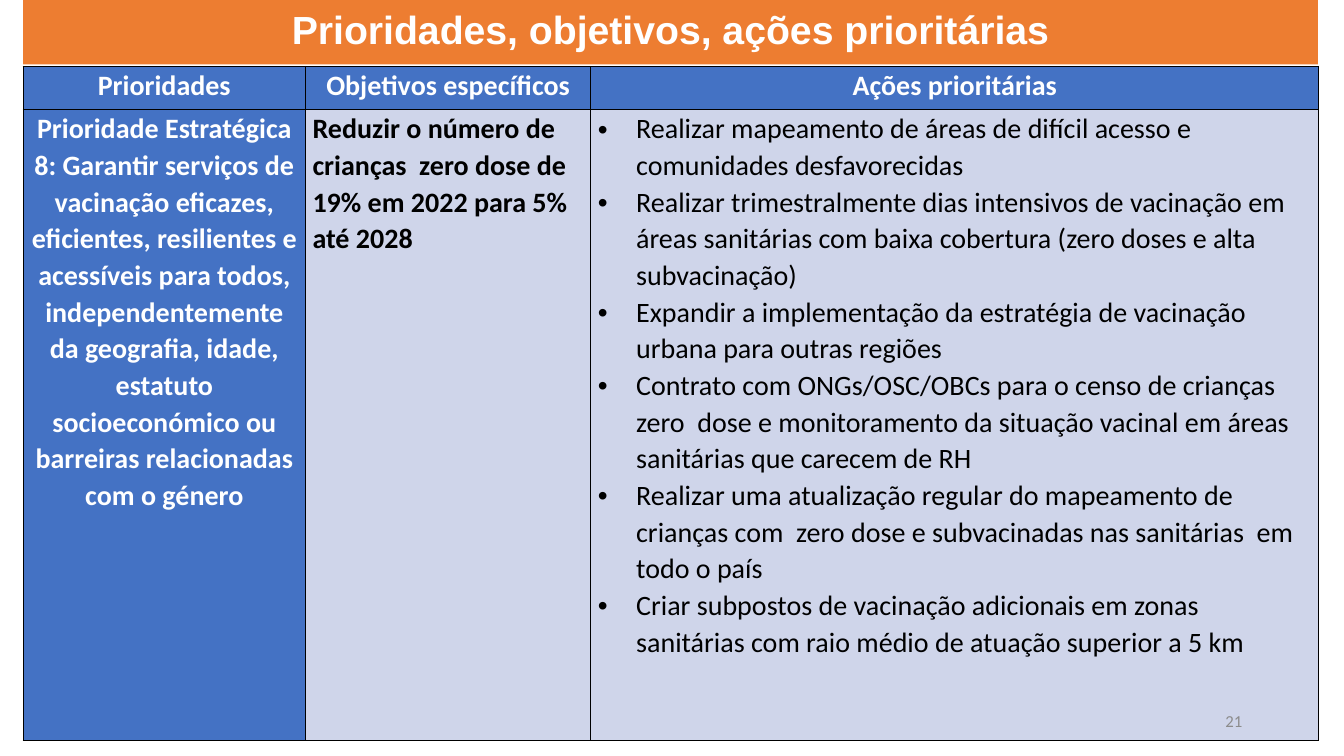
from lxml import etree
from pptx import Presentation
from pptx.dml.color import RGBColor
from pptx.enum.text import MSO_ANCHOR, MSO_AUTO_SIZE, PP_ALIGN
from pptx.oxml.ns import qn
from pptx.util import Inches, Pt

COLORS = {
    "orange": "ED7D31",
    "blue": "4472C4",
    "pale": "CFD5EA",
    "white": "FFFFFF",
    "black": "000000",
    "gray": "8C8C8C",
}

TITLE = "Prioridades, objetivos, ações prioritárias"
HEADERS = ["Prioridades", "Objetivos específicos", "Ações prioritárias"]
PRIORITY = (
    "Prioridade Estratégica 8: Garantir serviços de vacinação eficazes, "
    "eficientes, resilientes e acessíveis para todos, independentemente da "
    "geografia, idade, estatuto socioeconómico ou barreiras relacionadas com o género"
)
OBJECTIVE = "Reduzir o número de crianças  zero dose de 19% em 2022 para 5% até 2028"
ACTIONS = [
    "Realizar mapeamento de áreas de difícil acesso e comunidades desfavorecidas",
    "Realizar trimestralmente dias intensivos de vacinação em áreas sanitárias "
    "com baixa cobertura (zero doses e alta subvacinação)",
    "Expandir a implementação da estratégia de vacinação urbana para outras regiões",
    "Contrato com ONGs/OSC/OBCs para o censo de crianças zero  dose e "
    "monitoramento da situação vacinal em áreas sanitárias que carecem de RH",
    "Realizar uma atualização regular do mapeamento de crianças com  zero dose "
    "e subvacinadas nas sanitárias  em todo o país",
    "Criar subpostos de vacinação adicionais em zonas sanitárias com raio médio "
    "de atuação superior a 5 km",
]

LEFT, WIDTH = 0.23, 12.84
COLUMN_WIDTHS = [2.8, 2.83, 7.22]
ROW_HEIGHTS = [0.43, 6.26]
BULLET_INDENT = 0.38


def rgb(name):
    return RGBColor.from_string(COLORS[name])


def write_text(frame, texts, size=20, font="Calibri", color="black", bold=False,
               align=PP_ALIGN.LEFT, line=None, before=0, after=0, bullet=False):
    """Write one paragraph for each text, all in the same format."""
    for index, text in enumerate(texts):
        paragraph = frame.paragraphs[0] if index == 0 else frame.add_paragraph()
        paragraph.alignment = align
        paragraph.line_spacing = line
        paragraph.space_before, paragraph.space_after = Pt(before), Pt(after)
        run = paragraph.add_run()
        run.text = text
        run.font.size, run.font.name, run.font.bold = Pt(size), font, bold
        run.font.color.rgb = rgb(color)
        if bullet:
            add_bullet(paragraph)


def add_bullet(paragraph):
    properties = paragraph._p.get_or_add_pPr()
    properties.set("marL", str(Inches(BULLET_INDENT)))
    properties.set("indent", str(-Inches(BULLET_INDENT)))
    etree.SubElement(properties, qn("a:buFont")).set("typeface", "Arial")
    etree.SubElement(properties, qn("a:buChar")).set("char", "•")


def add_borders(cell):
    """Draw a thin black line on each side; borders come before the fill."""
    properties = cell._tc.get_or_add_tcPr()
    for position, side in enumerate(("a:lnL", "a:lnR", "a:lnT", "a:lnB")):
        border = etree.Element(qn(side), w=str(Pt(1)))
        fill = etree.SubElement(border, qn("a:solidFill"))
        etree.SubElement(fill, qn("a:srgbClr")).set("val", COLORS["black"])
        properties.insert(position, border)


def fill_cell(cell, texts, fill, **text_format):
    cell.margin_left = cell.margin_right = Inches(0.07)
    cell.margin_top = cell.margin_bottom = 0
    cell.fill.solid()
    cell.fill.fore_color.rgb = rgb(fill)
    add_borders(cell)
    write_text(cell.text_frame, texts, line=1.07, **text_format)


def add_title(slide):
    title = slide.shapes.title
    title.left, title.top = Inches(LEFT), Inches(0)
    title.width, title.height = Inches(WIDTH), Inches(0.64)
    title.fill.solid()
    title.fill.fore_color.rgb = rgb("orange")
    frame = title.text_frame
    frame.auto_size = MSO_AUTO_SIZE.NONE
    frame.vertical_anchor = MSO_ANCHOR.MIDDLE
    write_text(frame, [TITLE], size=28, font="Arial", color="white", bold=True,
               align=PP_ALIGN.CENTER, line=0.9)


def add_priorities_table(slide):
    table = slide.shapes.add_table(
        len(ROW_HEIGHTS), len(COLUMN_WIDTHS), Inches(LEFT), Inches(0.66),
        Inches(WIDTH), Inches(sum(ROW_HEIGHTS))).table
    for column, width in zip(table.columns, COLUMN_WIDTHS):
        column.width = Inches(width)
    for row, height in zip(table.rows, ROW_HEIGHTS):
        row.height = Inches(height)

    # Header row and priority column share one look
    spaced = {"bold": True, "before": 12, "after": 8}
    heading = {"fill": "blue", "color": "white", "align": PP_ALIGN.CENTER, **spaced}
    for index, header in enumerate(HEADERS):
        fill_cell(table.cell(0, index), [header], **heading)
    fill_cell(table.cell(1, 0), [PRIORITY], **heading)

    # Objective and actions
    fill_cell(table.cell(1, 1), [OBJECTIVE], fill="pale", **spaced)
    fill_cell(table.cell(1, 2), ACTIONS, fill="pale", bullet=True)


def add_page_number(slide):
    box = slide.shapes.add_textbox(Inches(9.42), Inches(6.95), Inches(3), Inches(0.4))
    frame = box.text_frame
    frame.word_wrap = True
    frame.vertical_anchor = MSO_ANCHOR.MIDDLE
    write_text(frame, ["21"], size=12, color="gray", align=PP_ALIGN.RIGHT)


def main():
    presentation = Presentation()
    presentation.slide_width, presentation.slide_height = Inches(13.33), Inches(7.5)
    title_only = presentation.slide_layouts[5]
    slide = presentation.slides.add_slide(title_only)
    add_title(slide)
    add_priorities_table(slide)
    add_page_number(slide)
    presentation.save("out.pptx")


if __name__ == "__main__":
    main()
